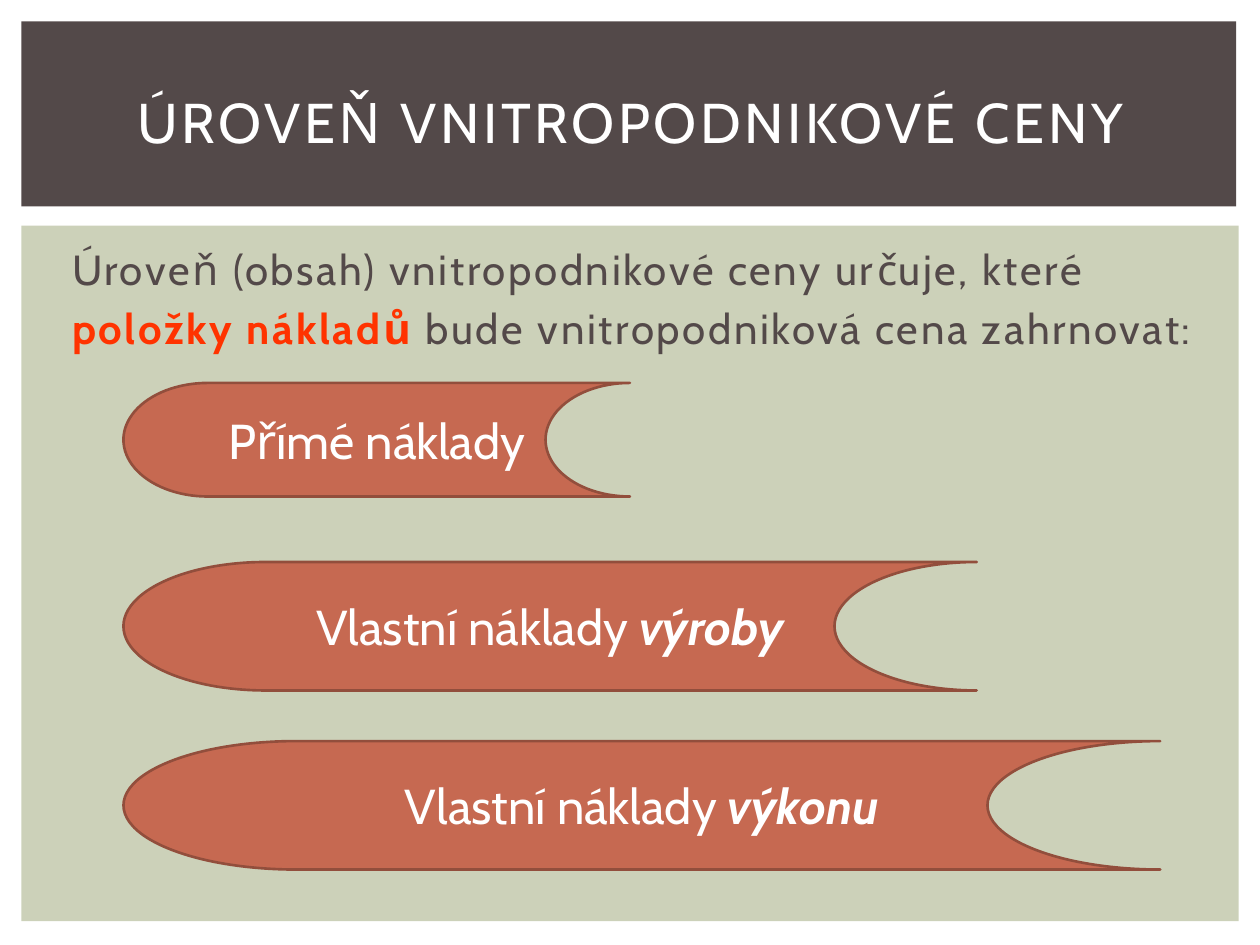
from pptx import Presentation
from pptx import util as u
from pptx.dml.color import RGBColor
from pptx.enum import shapes, text

FONT = "Cabin"
DARK, SAGE, RUST, EDGE = "534949", "CCD1B9", "C66951", "924E3C"
WHITE, RED = "FFFFFF", "FF3300"


def tint(hue):
    """Return the colour for a hex string."""
    return RGBColor.from_string(hue)


def place(shape, box):
    """Move a shape to a box given in centimetres."""
    shape.left, shape.top, shape.width, shape.height = map(u.Cm, box)


def style(para, size, hue, align):
    """Set the font and alignment of a paragraph."""
    font = para.font
    font.name, font.size, font.color.rgb = FONT, u.Pt(size), tint(hue)
    para.alignment = align


def space(para, points):
    """Set the letter spacing of every run in a paragraph."""
    for run in para.runs:
        run._r.get_or_add_rPr().set("spc", str(int(points * 100)))


def draw(slide, kind, box, fill, edge=None):
    """Add a flat filled shape, outlined if an edge colour is given."""
    shape = slide.shapes.add_shape(kind, *map(u.Cm, box))
    shape.shadow.inherit = False
    shape.fill.solid()
    shape.fill.fore_color.rgb = tint(fill)
    if edge:
        shape.line.color.rgb = tint(edge)
        shape.line.width = u.Pt(1.5)
    else:
        shape.line.fill.background()
    return shape


def header(slide, box, words):
    """Draw the dark band with the slide title on it."""
    left, top, width, height = box
    band = draw(slide, shapes.MSO_SHAPE.RECTANGLE, box, DARK)
    title = slide.shapes.title
    band._element.addnext(title._element)
    place(title, (left + 0.64, top + 0.56, width - 1.2, height - 0.81))
    frame = title.text_frame
    frame.text = words
    frame.auto_size = text.MSO_AUTO_SIZE.NONE
    frame.vertical_anchor = text.MSO_ANCHOR.MIDDLE
    para = frame.paragraphs[0]
    style(para, 32, WHITE, text.PP_ALIGN.CENTER)
    space(para, 2)


def intro(slide, box, lines):
    """Write the opening lines, given as lists of (words, strong) pairs."""
    frame = slide.shapes.add_textbox(*map(u.Cm, box)).text_frame
    frame.word_wrap = True
    frame.margin_left += u.Cm(0.13)
    for i, parts in enumerate(lines):
        para = frame.add_paragraph() if i else frame.paragraphs[0]
        style(para, 24, DARK, text.PP_ALIGN.LEFT)
        para.space_before = u.Pt(4.8)
        for words, strong in parts:
            run = para.add_run()
            run.text = words
            if strong:
                run.font.bold = True
                run.font.color.rgb = tint(RED)
        space(para, 1.5)


def banner(slide, box, plain, strong):
    """Draw one cost banner with an optional emphasised last word."""
    shape = draw(slide, shapes.MSO_SHAPE.FLOWCHART_STORED_DATA, box, RUST, EDGE)
    frame = shape.text_frame
    frame.vertical_anchor = text.MSO_ANCHOR.MIDDLE
    para = frame.paragraphs[0]
    style(para, 28, WHITE, text.PP_ALIGN.CENTER)
    para.add_run().text = plain
    if strong:
        run = para.add_run()
        run.text = strong
        run.font.bold = run.font.italic = True


def content(slide, box):
    """Draw the sage panel with the intro and the three cost banners."""
    left, top, width, height = box
    draw(slide, shapes.MSO_SHAPE.RECTANGLE, box, SAGE)
    intro(slide, (left + 0.64, top + 0.23, width - 1.2, 2.8), [
        [("Úroveň (obsah) vnitropodnikové ceny určuje, které", False)],
        [("položky nákladů", True),
         (" bude vnitropodniková cena zahrnovat:", False)],
    ])
    costs = [
        (10.21, 2.29, "Přímé náklady", ""),
        (17.2, 2.59, "Vlastní náklady ", "výroby"),
        (20.9, 2.59, "Vlastní náklady ", "výkonu"),
    ]
    for i, (wide, tall, plain, strong) in enumerate(costs):
        spot = (left + 2.06, top + 3.17 + 3.61 * i, wide, tall)
        banner(slide, spot, plain, strong)


def main():
    """Build and save the slide."""
    deck = Presentation()
    deck.slide_width, deck.slide_height = u.Cm(25.4), u.Cm(19.05)
    slide = deck.slides.add_slide(deck.slide_layouts[5])
    header(slide, (0.43, 0.43, 24.49, 3.73), "ÚROVEŇ VNITROPODNIKOVÉ CENY")
    content(slide, (0.43, 4.55, 24.54, 14.02))
    deck.save("out.pptx")


if __name__ == "__main__":
    main()
